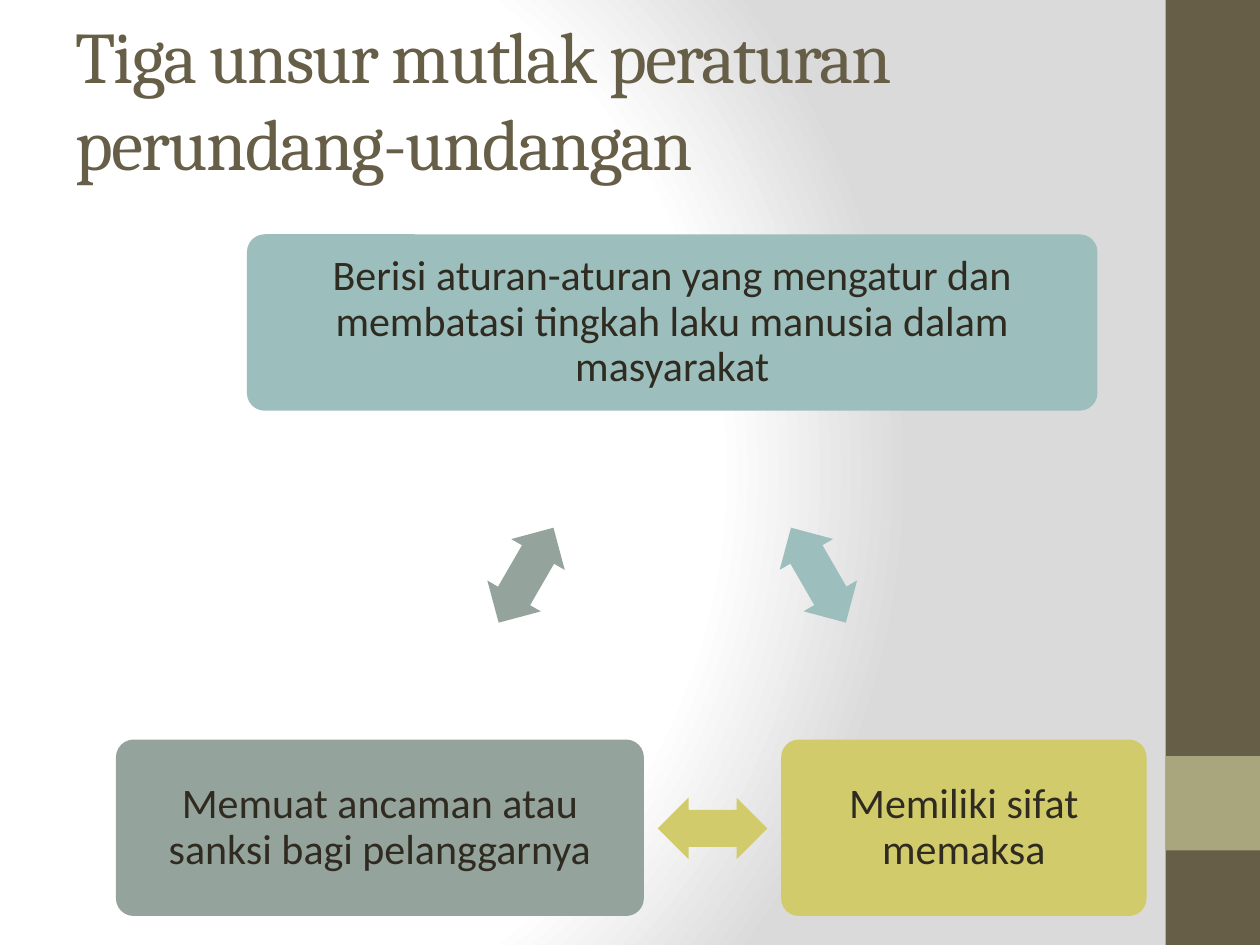
from lxml import etree
from pptx import Presentation
from pptx.dml.color import RGBColor
from pptx.enum.shapes import MSO_SHAPE
from pptx.enum.text import MSO_ANCHOR, PP_ALIGN
from pptx.oxml import parse_xml
from pptx.oxml.ns import nsdecls, qn
from pptx.util import Inches, Pt

RECT = MSO_SHAPE.RECTANGLE
ROUND = MSO_SHAPE.ROUNDED_RECTANGLE
ARROW = MSO_SHAPE.LEFT_RIGHT_ARROW
MIDDLE = MSO_ANCHOR.MIDDLE
CENTER = PP_ALIGN.CENTER

WIDE, HIGH = Inches(10), Inches(7.5)
COLS, ROWS = 100, 75
COLORS = {
    "white": "FFFFFF", "gray": "DADADA", "brown": "675E47", "khaki": "A9A57C",
    "ink": "2F2B20", "teal": "9CBEBD", "lime": "D2CB6C", "sage": "95A39D",
}
BOX_HIGH = 14
ARROW_SIZE = (8.7, 4.9)

# text, color, left column, top row, columns wide
BOXES = [
    ("Berisi aturan-aturan yang mengatur dan membatasi tingkah laku manusia "
     "dalam masyarakat", "teal", 19.6, 18.6, 67.5),
    ("Memiliki sifat memaksa", "lime", 62, 58.7, 29),
    ("Memuat ancaman atau sanksi bagi pelanggarnya", "sage", 9.2, 58.7, 41.9),
]
# color, left column, top row, turn in degrees
ARROWS = [
    ("teal", 60.6, 43.2, 60),
    ("lime", 52.2, 63.3, 180),
    ("sage", 37.4, 43.2, 300),
]


def place(col, row, cols, rows):
    """Turn grid units into left, top, width and height."""
    return (int(WIDE * col / COLS), int(HIGH * row / ROWS),
            int(WIDE * cols / COLS), int(HIGH * rows / ROWS))


def paint_back(slide):
    """Fill the background with a round gradient centered left of the middle."""
    fill = slide.background.fill
    fill.gradient()
    old = slide.background._cSld.find(".//" + qn("a:gradFill"))
    stops = "".join(
        f'<a:gs pos="{pos * 1000}"><a:srgbClr val="{COLORS[name]}"/></a:gs>'
        for pos, name in ((0, "white"), (75, "white"), (100, "gray")))
    new = parse_xml(
        f'<a:gradFill {nsdecls("a")} rotWithShape="1"><a:gsLst>{stops}</a:gsLst>'
        '<a:path path="circle"><a:fillToRect l="20000" t="50000" r="100000" '
        'b="50000"/></a:path></a:gradFill>')
    old.getparent().replace(old, new)


def add_form(slide, kind, color, spot, adjust=(), turn=0):
    form = slide.shapes.add_shape(kind, *place(*spot))
    form.shadow.inherit = False
    form.fill.solid()
    form.fill.fore_color.rgb = RGBColor.from_string(COLORS[color])
    form.line.fill.background()
    for index, value in enumerate(adjust):
        form.adjustments[index] = value
    form.rotation = turn
    return form


def add_run(para, text, font, size, color):
    run = para.add_run()
    run.text = text
    run.font.name = font
    run.font.size = Pt(size)
    run.font.color.rgb = RGBColor.from_string(COLORS[color])
    return run


def add_title(slide, text):
    frame = slide.shapes.add_textbox(*place(5, 3, 88.3, 9.5)).text_frame
    frame.word_wrap = True
    frame.vertical_anchor = MIDDLE
    run = add_run(frame.paragraphs[0], text, "Cambria", 41.4, "brown")
    run.font._element.set("spc", "-100")


def add_box(slide, text, color, col, row, cols):
    box = add_form(slide, ROUND, color, (col, row, cols, BOX_HIGH), (0.1,))
    frame = box.text_frame
    frame.word_wrap = True
    frame.vertical_anchor = MIDDLE
    frame.margin_left = frame.margin_right = Inches(0.1)
    frame.margin_top = frame.margin_bottom = Inches(0.1)
    para = frame.paragraphs[0]
    para.alignment = CENTER
    para.line_spacing = 0.9
    add_run(para, text, "Calibri", 24, "ink")


def main():
    deck = Presentation()
    deck.slide_width, deck.slide_height = WIDE, HIGH
    slide = deck.slides.add_slide(deck.slide_layouts[6])
    paint_back(slide)
    add_form(slide, RECT, "brown", (92.5, 0, 7.5, ROWS))
    add_form(slide, RECT, "khaki", (92.5, 60, 7.5, 7.5))
    add_title(slide, "Tiga unsur mutlak peraturan perundang-undangan")
    for box in BOXES:
        add_box(slide, *box)
    for color, col, row, turn in ARROWS:
        add_form(slide, ARROW, color, (col, row, *ARROW_SIZE), (0.6, 0.5), turn)
    deck.save("out.pptx")


if __name__ == "__main__":
    main()
